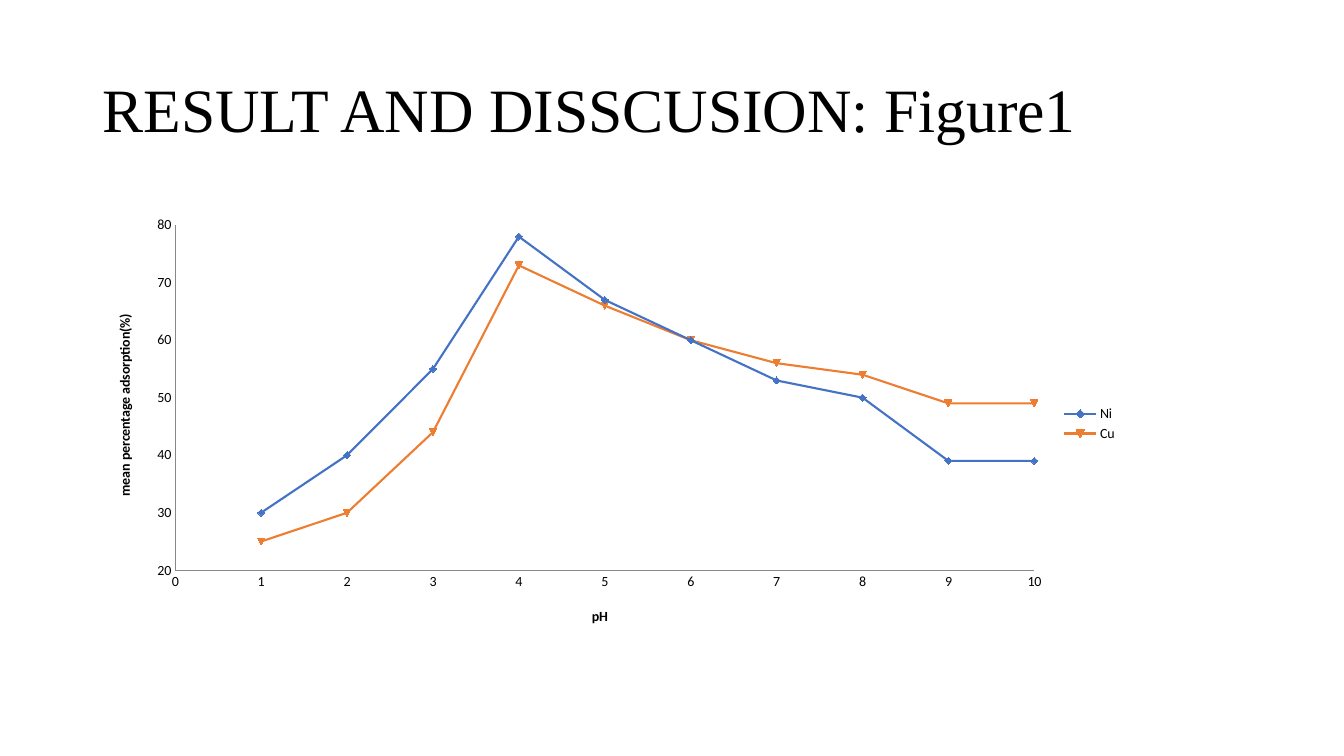
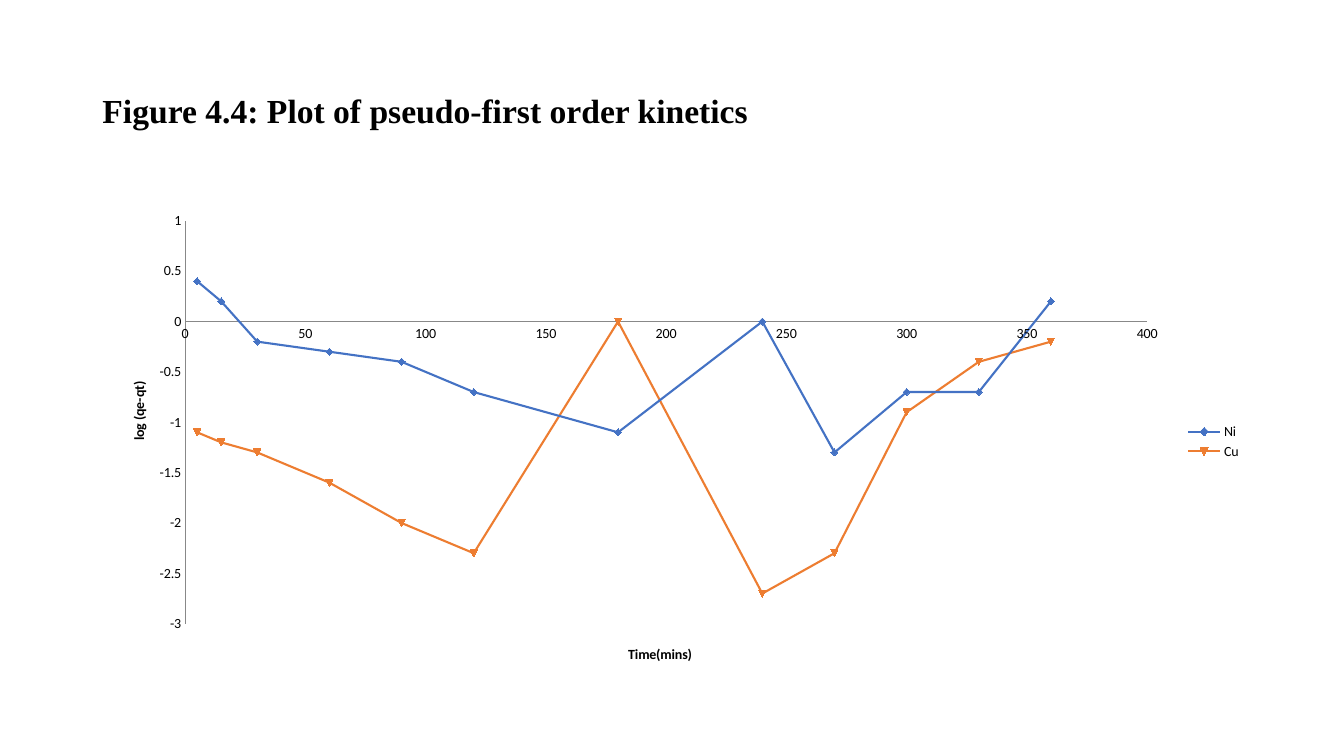
from dataclasses import dataclass

from lxml.etree import SubElement
from pptx import Presentation
from pptx.chart.data import XyChartData
from pptx.dml.color import RGBColor
from pptx.enum.chart import XL_CHART_TYPE as ChartType
from pptx.enum.chart import XL_LEGEND_POSITION as LegendPosition
from pptx.enum.chart import XL_MARKER_STYLE as MarkerStyle
from pptx.enum.chart import XL_TICK_LABEL_POSITION as LabelPosition
from pptx.enum.chart import XL_TICK_MARK as TickMark
from pptx.enum.text import MSO_ANCHOR as Anchor
from pptx.enum.text import PP_ALIGN as Align
from pptx.oxml.ns import qn
from pptx.util import Pt

EMU_PER_PX = 9525
TITLE_ONLY_LAYOUT = 5


def px(length):
    return length * EMU_PER_PX


@dataclass(frozen=True)
class Theme:
    text: str = "000000"
    axis: str = "888888"
    series: tuple = ("4472C4", "ED7D31")
    title_font: str = "Times New Roman"
    chart_font: str = "Calibri"
    title_size: int = 44
    caption_size: int = 24
    chart_size: int = 10
    axis_width: float = 0.75
    series_width: float = 1.5
    marker_size: int = 5


@dataclass(frozen=True)
class AxisScale:
    title: str
    minimum: float
    maximum: float
    step: float
    title_at: tuple


def format_font(font, name, size, color, bold=False):
    font.name = name
    font.size = Pt(size)
    font.bold = bold
    font.color.rgb = RGBColor.from_string(color)


def write_text(frame, text, align=None, line_spacing=None, **font_format):
    paragraph = frame.paragraphs[0]
    run = paragraph.add_run()
    run.text = text
    format_font(run.font, **font_format)
    if align is not None:
        paragraph.alignment = align
    if line_spacing is not None:
        paragraph.line_spacing = line_spacing


def place_in_chart(element, index, **fractions):
    """Fix a chart part at x, y (and w, h) given as fractions of the chart."""
    layout = element.find(qn("c:layout"))
    if layout is None:
        layout = SubElement(element, qn("c:layout"))
        element.insert(index, layout)
    manual = SubElement(layout, qn("c:manualLayout"))
    settings = {"xMode": "edge", "yMode": "edge", **fractions}
    if "w" in fractions:
        settings = {"layoutTarget": "inner", **settings}
    for name, value in settings.items():
        SubElement(manual, qn(f"c:{name}")).set("val", str(value))


class Deck:
    def __init__(self, theme):
        self.theme = theme
        self.presentation = Presentation()
        self.presentation.slide_width = px(1280)
        self.presentation.slide_height = px(720)
        self.slide = None

    def add_slide(self, title, size, bold=False):
        layout = self.presentation.slide_layouts[TITLE_ONLY_LAYOUT]
        self.slide = self.presentation.slides.add_slide(layout)
        shape = self.slide.shapes.title
        shape.left, shape.top, shape.width, shape.height = map(px, (88, 38, 1104, 139))
        shape.text_frame.word_wrap = True
        shape.text_frame.vertical_anchor = Anchor.MIDDLE
        write_text(shape.text_frame, title, align=Align.LEFT, line_spacing=0.9,
                   name=self.theme.title_font, size=size,
                   color=self.theme.text, bold=bold)

    def add_scatter(self, box, x_values, series, x_scale, y_scale, plot_height):
        data = XyChartData()
        for name, y_values in series.items():
            points = data.add_series(name)
            for x, y in zip(x_values, y_values, strict=True):
                points.add_data_point(x, y)
        chart = self.slide.shapes.add_chart(
            ChartType.XY_SCATTER_SMOOTH, *map(px, box), data).chart
        theme = self.theme
        format_font(chart.font, theme.chart_font, theme.chart_size, theme.text)
        chart.has_title = False
        chart.has_legend = True
        chart.legend.position = LegendPosition.RIGHT
        chart.legend.include_in_layout = False
        chart.plots[0].vary_by_categories = False
        plot_area = chart.element.find(f".//{qn('c:plotArea')}")
        place_in_chart(plot_area, 0, x=0.08, y=0.04, w=0.83, h=plot_height)
        self.style_axis(chart.category_axis, x_scale)
        self.style_axis(chart.value_axis, y_scale)
        for line, color in zip(chart.plots[0].series, theme.series):
            self.style_series(line, RGBColor.from_string(color))

    def style_axis(self, axis, scale):
        theme = self.theme
        axis.minimum_scale = scale.minimum
        axis.maximum_scale = scale.maximum
        axis.major_unit = scale.step
        axis.has_major_gridlines = False
        axis.major_tick_mark = axis.minor_tick_mark = TickMark.NONE
        axis.tick_label_position = LabelPosition.NEXT_TO_AXIS
        axis.tick_labels.number_format = "General"
        axis.tick_labels.number_format_is_linked = False
        axis.format.line.color.rgb = RGBColor.from_string(theme.axis)
        axis.format.line.width = Pt(theme.axis_width)
        write_text(axis.axis_title.text_frame, scale.title, name=theme.chart_font,
                   size=theme.chart_size, color=theme.text, bold=True)
        left, top = scale.title_at
        place_in_chart(axis.axis_title.element, 1, x=left, y=top)

    def style_series(self, line, color):
        line.smooth = True
        line.format.line.color.rgb = color
        line.format.line.width = Pt(self.theme.series_width)
        marker = line.marker
        marker.style = MarkerStyle.AUTOMATIC
        marker.size = self.theme.marker_size
        marker.format.fill.solid()
        marker.format.fill.fore_color.rgb = color
        marker.format.line.color.rgb = color


def main():
    theme = Theme()
    deck = Deck(theme)

    deck.add_slide("RESULT AND DISSCUSION: Figure1", theme.title_size)
    deck.add_scatter(
        (88, 198, 986, 411),
        range(1, 11),
        {"Ni": (30, 40, 55, 78, 67, 60, 53, 50, 39, 39),
         "Cu": (25, 30, 44, 73, 66, 60, 56, 54, 49, 49)},
        AxisScale("pH", 0, 10, 1, (0.48, 0.92)),
        AxisScale("mean percentage adsorption(%)", 20, 80, 10, (0.02, 0.24)),
        plot_height=0.8,
    )

    deck.add_slide("Figure 4.4: Plot of pseudo-first order kinetics",
                   theme.caption_size, bold=True)
    deck.add_scatter(
        (88, 192, 1104, 457),
        (5, 15, 30, 60, 90, 120, 180, 240, 270, 300, 330, 360),
        {"Ni": (0.4, 0.2, -0.2, -0.3, -0.4, -0.7, -1.1, 0, -1.3, -0.7, -0.7, 0.2),
         "Cu": (-1.1, -1.2, -1.3, -1.6, -2, -2.3, 0, -2.7, -2.3, -0.9, -0.4, -0.2)},
        AxisScale("Time(mins)", 0, 400, 50, (0.46, 0.92)),
        AxisScale("log (qe-qt)", -3, 1, 0.5, (0.03, 0.37)),
        plot_height=0.84,
    )

    deck.presentation.save("out.pptx")


if __name__ == "__main__":
    main()
